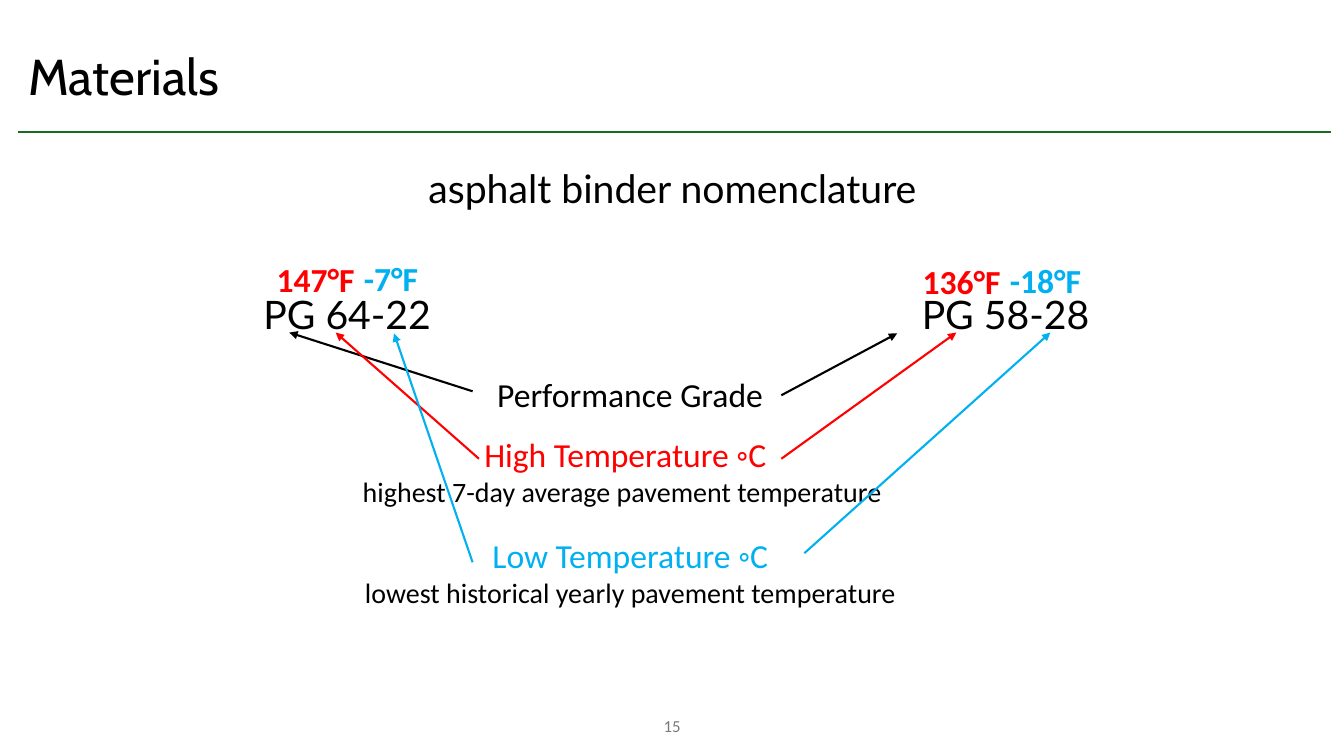
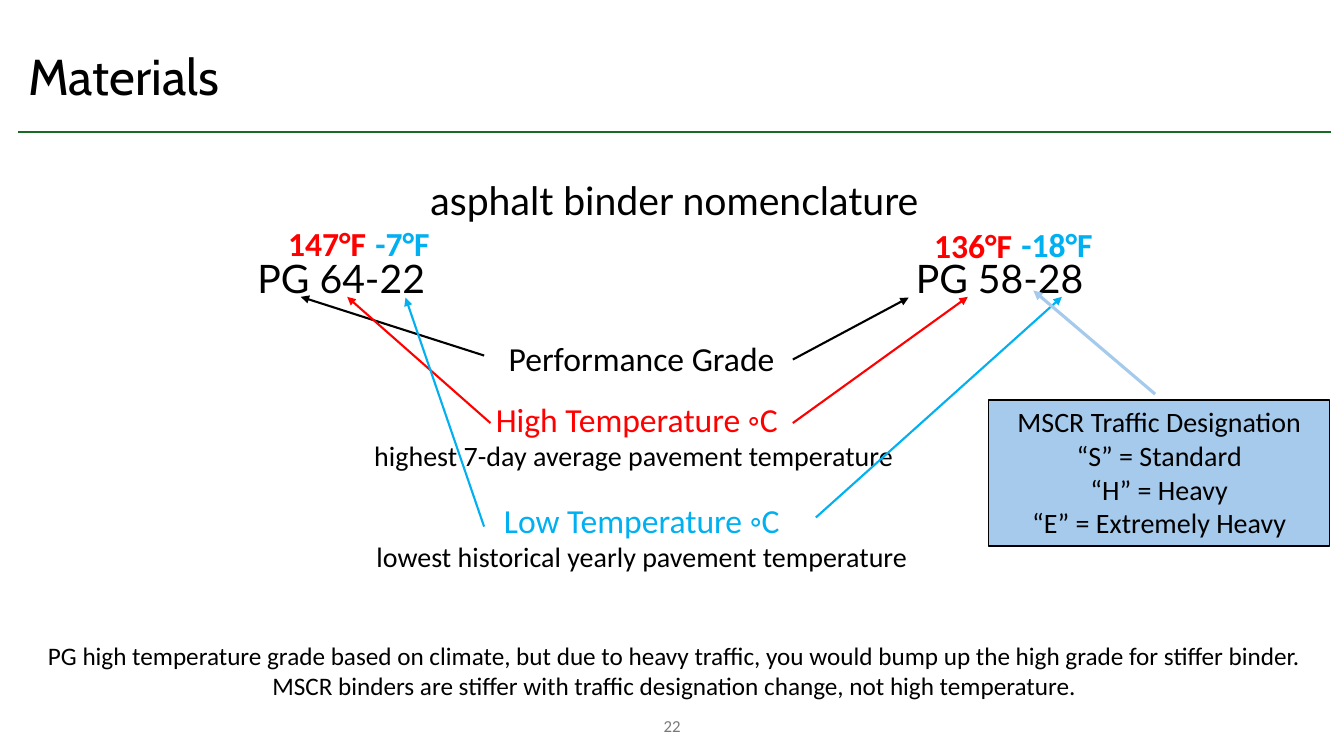
"""Build two slides on asphalt binder nomenclature."""
import lxml.etree
import pptx
import pptx.dml.color
import pptx.enum.shapes
import pptx.enum.text
import pptx.oxml.ns
import pptx.util

Cm = pptx.util.Cm
Pt = pptx.util.Pt
ALIGN = pptx.enum.text.PP_ALIGN
ANCHOR = pptx.enum.text.MSO_ANCHOR
qn = pptx.oxml.ns.qn
COLORS = {
    name: pptx.dml.color.RGBColor.from_string(value)
    for name, value in {
        "text": "000000", "rule": "196B24", "number": "797979",
        "high": "FF0000", "low": "00B0F0", "callout": "A6CAEC",
    }.items()
}
LEFT, WIDTH = 0.46, 33.07


def write(sp, lines, font="Calibri", align=ALIGN.CENTER, anchor=ANCHOR.TOP,
          wrap=True, bold=False, spacing=1.0):
    """Fill a shape with (text, size, color) lines."""
    tf = sp.text_frame
    tf.auto_size = pptx.enum.text.MSO_AUTO_SIZE.NONE
    tf.word_wrap = wrap
    tf.vertical_anchor = anchor
    for i, (text, size, color) in enumerate(lines):
        p = tf.add_paragraph() if i else tf.paragraphs[0]
        p.text = text
        p.alignment = align
        p.line_spacing = spacing
        p.font.name = font
        p.font.size = Pt(size)
        p.font.bold = bold
        p.font.color.rgb = COLORS[color]


def add_line(s, x1, y1, x2, y2, color, width=1.5, arrow=True):
    """Draw a straight line, with an arrowhead at its end if wanted."""
    line = s.shapes.add_connector(
        pptx.enum.shapes.MSO_CONNECTOR.STRAIGHT, Cm(x1), Cm(y1), Cm(x2), Cm(y2))
    line.line.color.rgb = COLORS[color]
    line.line.width = Pt(width)
    if arrow:
        ln = line.line._get_or_add_ln()
        lxml.etree.SubElement(ln, qn("a:tailEnd"), type="triangle")
    lxml.etree.SubElement(line.element.spPr, qn("a:effectLst"))


labels = [
    (12.07, 9.3, 7.62, 1.27, True, [("Performance Grade", 24, "text")]),
    (8.79, 10.82, 13.94, 2.13, False, [
        ("High Temperature ◦C", 24, "high"),
        ("highest 7-day average pavement temperature ", 20, "text")]),
    (8.76, 13.36, 14.25, 2.13, False, [
        ("Low Temperature ◦C", 24, "low"),
        ("lowest historical yearly pavement temperature", 20, "text")]),
]
arrows = [
    (19.69, 9.96, 22.61, 8.4, "text"),
    (11.91, 9.86, 7.29, 8.38, "text"),
    (19.69, 11.56, 24.1, 8.38, "high"),
    (12.07, 11.56, 8.46, 8.38, "high"),
    (20.27, 13.94, 26.47, 8.38, "low"),
    (11.91, 14.17, 9.93, 8.4, "low"),
]
fahrenheit = [
    (6.71, 6.4, 2.49, "147°F", "high", ALIGN.CENTER),
    (8.92, 6.38, 1.91, "-7°F", "low", ALIGN.LEFT),
    (22.99, 6.45, 2.49, "136°F", "high", ALIGN.CENTER),
    (25.2, 6.43, 2.34, "-18°F", "low", ALIGN.LEFT),
]
grades = [(0.61, 16.28, "PG 64-22"), (17.15, 16.38, "PG 58-28")]
variants = [
    {"number": "15", "heading": (0.41, 4.14), "grade_dx": 0, "dx": 0, "dy": 0},
    {"number": "22", "heading": (0.46, 4.45), "grade_dx": -0.15, "dx": 0.29, "dy": -0.9},
]

prs = pptx.Presentation()
prs.slide_width, prs.slide_height = Cm(33.87), Cm(19.05)

for variant in variants:
    s = prs.slides.add_slide(prs.slide_layouts[5])
    dx, dy = variant["dx"], variant["dy"]

    title = s.shapes.title
    title.left, title.top = Cm(LEFT), Cm(1.02)
    title.width, title.height = Cm(WIDTH), Cm(1.93)
    write(title, [("Materials", 36, "text")], font="Cabin", align=ALIGN.LEFT,
          anchor=ANCHOR.MIDDLE, spacing=0.9)
    add_line(s, LEFT, 3.33, LEFT + WIDTH, 3.33, "rule", arrow=False)

    sp = s.shapes.add_textbox(Cm(13.13), Cm(17.78), Cm(7.62), Cm(1.02))
    write(sp, [(variant["number"], 12, "number")], anchor=ANCHOR.MIDDLE)

    x, y = variant["heading"]
    sp = s.shapes.add_textbox(Cm(x), Cm(y), Cm(WIDTH), Cm(1.93))
    write(sp, [("asphalt binder nomenclature", 28, "text")], font="Lato", spacing=0.9)

    for x, w, text in grades:
        sp = s.shapes.add_textbox(
            Cm(x + variant["grade_dx"]), Cm(7.32 + dy), Cm(w), Cm(1.63))
        write(sp, [(text, 28, "text")], font="Lato", spacing=0.9)

    for x, y, w, h, wrap, lines in labels:
        sp = s.shapes.add_textbox(Cm(x + dx), Cm(y + dy), Cm(w), Cm(h))
        write(sp, lines, wrap=wrap)

    for x1, y1, x2, y2, color in arrows:
        add_line(s, x1 + dx, y1 + dy, x2 + dx, y2 + dy, color)

    for x, y, w, text, color, align in fahrenheit:
        sp = s.shapes.add_textbox(Cm(x + dx), Cm(y + dy), Cm(w), Cm(1.27))
        write(sp, [(text, 24, color)], align=align, bold=True,
              wrap=align == ALIGN.CENTER)

callout = s.shapes.add_shape(
    pptx.enum.shapes.MSO_SHAPE.RECTANGLE, Cm(24.92), Cm(10.08), Cm(8.59), Cm(3.68))
callout.shadow.inherit = False
callout.fill.solid()
callout.fill.fore_color.rgb = COLORS["callout"]
callout.line.color.rgb = COLORS["text"]
callout.line.width = Pt(0.75)
designations = ["MSCR Traffic Designation", "“S” = Standard", "“H” = Heavy",
                "“E” = Extremely Heavy"]
write(callout, [(text, 20, "text") for text in designations])
add_line(s, 29.11, 9.93, 26.04, 7.32, "callout", width=2.25)

sp = s.shapes.add_textbox(Cm(LEFT), Cm(16), Cm(WIDTH), Cm(1.8))
write(sp, [
    ("PG high temperature grade based on climate, but due to heavy traffic, "
     "you would bump up the high grade for stiffer binder.", 18, "text"),
    ("MSCR binders are stiffer with traffic designation change, "
     "not high temperature.", 18, "text"),
])

prs.save("out.pptx")
